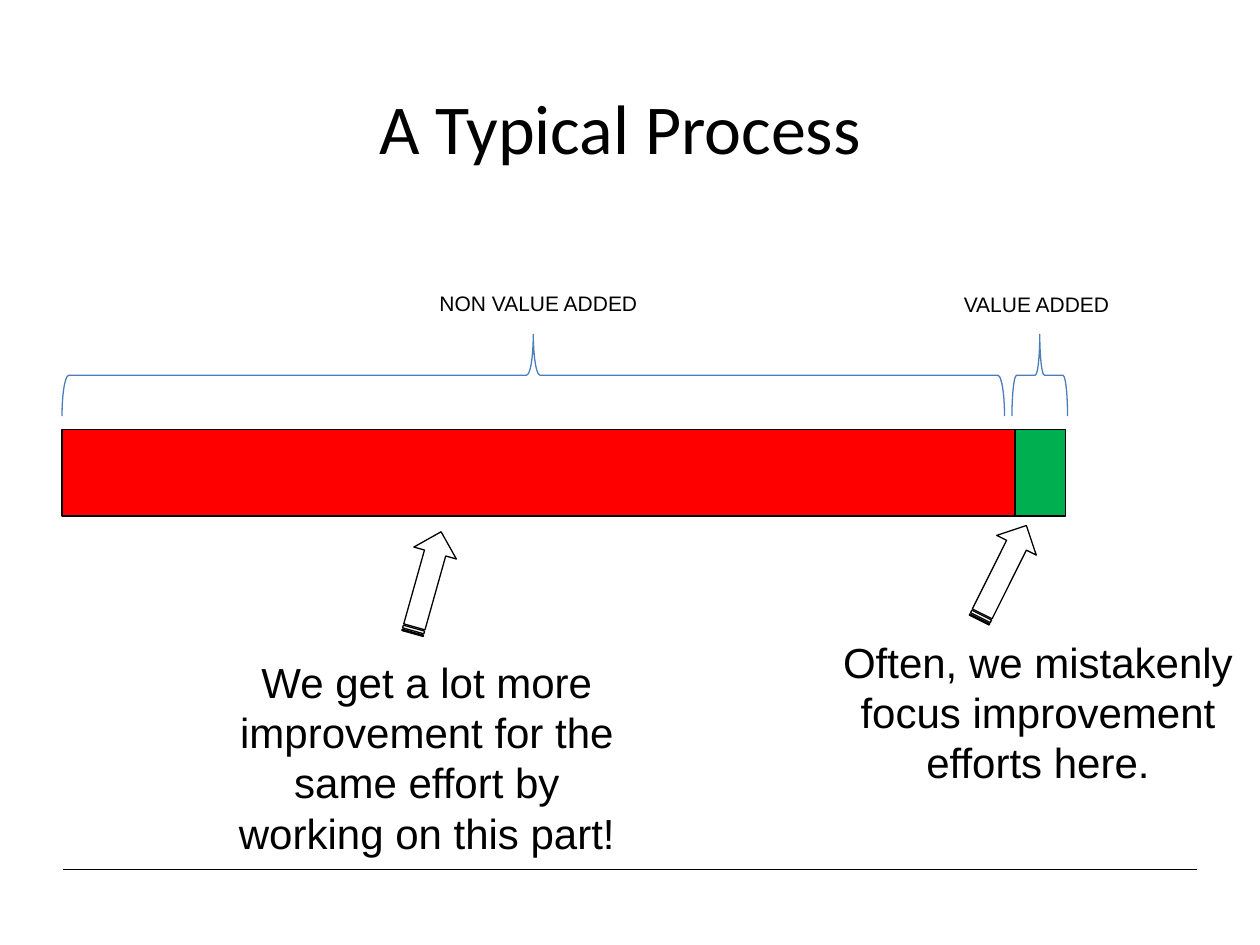
from dataclasses import dataclass

from lxml.etree import SubElement
from pptx import Presentation
from pptx.dml.color import RGBColor
from pptx.enum.shapes import MSO_CONNECTOR, MSO_SHAPE
from pptx.enum.text import MSO_ANCHOR, PP_ALIGN
from pptx.oxml.ns import qn
from pptx.util import Cm, Pt


@dataclass(frozen=True)
class Theme:
    ink: str = "000000"
    paper: str = "FFFFFF"
    brace: str = "4A7DBA"
    waste: str = "FF0000"
    value: str = "00B050"
    title_font: str = "Calibri"
    body_font: str = "Arial"
    title_size: int = 40
    callout_size: int = 24
    label_size: int = 12
    thin: float = 0.75
    outline: float = 1


class SlideBuilder:
    """Draws on one slide in one theme; all lengths are centimetres."""

    def __init__(self, slide, theme):
        self.slide = slide
        self.theme = theme

    def text(self, words, left, top, width, height, size, font=None,
             align=PP_ALIGN.LEFT, anchor=MSO_ANCHOR.TOP):
        box = self.slide.shapes.add_textbox(Cm(left), Cm(top), Cm(width), Cm(height))
        frame = box.text_frame
        frame.word_wrap = True
        frame.vertical_anchor = anchor
        frame.text = words
        paragraph = frame.paragraphs[0]
        paragraph.alignment = align
        for run in paragraph.runs:
            run.font.name = font or self.theme.body_font
            run.font.size = Pt(size)
            run.font.color.rgb = RGBColor.from_string(self.theme.ink)

    def title(self, words):
        self.text(words, 1.07, 0.97, 22.86, 3.18, self.theme.title_size,
                  self.theme.title_font, PP_ALIGN.CENTER, MSO_ANCHOR.MIDDLE)

    def label(self, words, left, top):
        self.text(words, left, top, 5.44, 0.99, self.theme.label_size)

    def callout(self, words, left, top, height):
        self.text(words, left, top, 8.53, height, self.theme.callout_size,
                  align=PP_ALIGN.CENTER)

    def shape(self, kind, left, top, width, height, line, weight, fill=None, rotation=0):
        shape = self.slide.shapes.add_shape(kind, Cm(left), Cm(top), Cm(width), Cm(height))
        shape.shadow.inherit = False
        shape.rotation = rotation
        shape.line.color.rgb = RGBColor.from_string(line)
        shape.line.width = Pt(weight)
        if fill:
            shape.fill.solid()
            shape.fill.fore_color.rgb = RGBColor.from_string(fill)
        else:
            shape.fill.background()

    def bar(self, left, width, fill):
        self.shape(MSO_SHAPE.RECTANGLE, left, 8.66, width, 1.75,
                   self.theme.ink, self.theme.outline, fill)

    def brace(self, left, span):
        """Lay a left brace on its side, covering the span from left."""
        top, depth = 6.74, 1.65
        self.shape(MSO_SHAPE.LEFT_BRACE, left + (span - depth) / 2, top + (depth - span) / 2,
                   depth, span, self.theme.brace, self.theme.thin, rotation=90)

    def arrow(self, left, top, rotation):
        self.shape(MSO_SHAPE.STRIPED_RIGHT_ARROW, left, top, 2.13, 0.89,
                   self.theme.ink, self.theme.thin, self.theme.paper, rotation)

    def rule(self, left, right, height):
        line = self.slide.shapes.add_connector(
            MSO_CONNECTOR.STRAIGHT, Cm(left), Cm(height), Cm(right), Cm(height))
        line.line.color.rgb = RGBColor.from_string(self.theme.ink)
        line.line.width = Pt(self.theme.thin)
        SubElement(line.element.spPr, qn("a:effectLst"))


def main():
    presentation = Presentation()
    presentation.slide_width = Cm(25.4)
    presentation.slide_height = Cm(19.05)
    theme = Theme()
    builder = SlideBuilder(presentation.slides.add_slide(presentation.slide_layouts[6]), theme)

    builder.rule(1.27, 24.13, 17.53)
    builder.label("NON VALUE ADDED", 8.61, 5.74)
    builder.label("VALUE ADDED", 19.18, 5.76)
    builder.brace(1.25, 19)
    builder.brace(20.4, 1.12)
    builder.bar(1.25, 19.3, theme.waste)
    builder.bar(20.46, 1.02, theme.value)
    builder.arrow(19.15, 11.1, 296.5)
    builder.callout("Often, we mistakenly focus improvement efforts here.", 16.66, 12.7, 3.33)
    builder.arrow(7.54, 11.3, 285.7)
    builder.callout("We get a lot more improvement for the same effort by working on this part!",
                    4.34, 13.1, 4.37)
    builder.title("A Typical Process")

    presentation.save("out.pptx")


if __name__ == "__main__":
    main()
